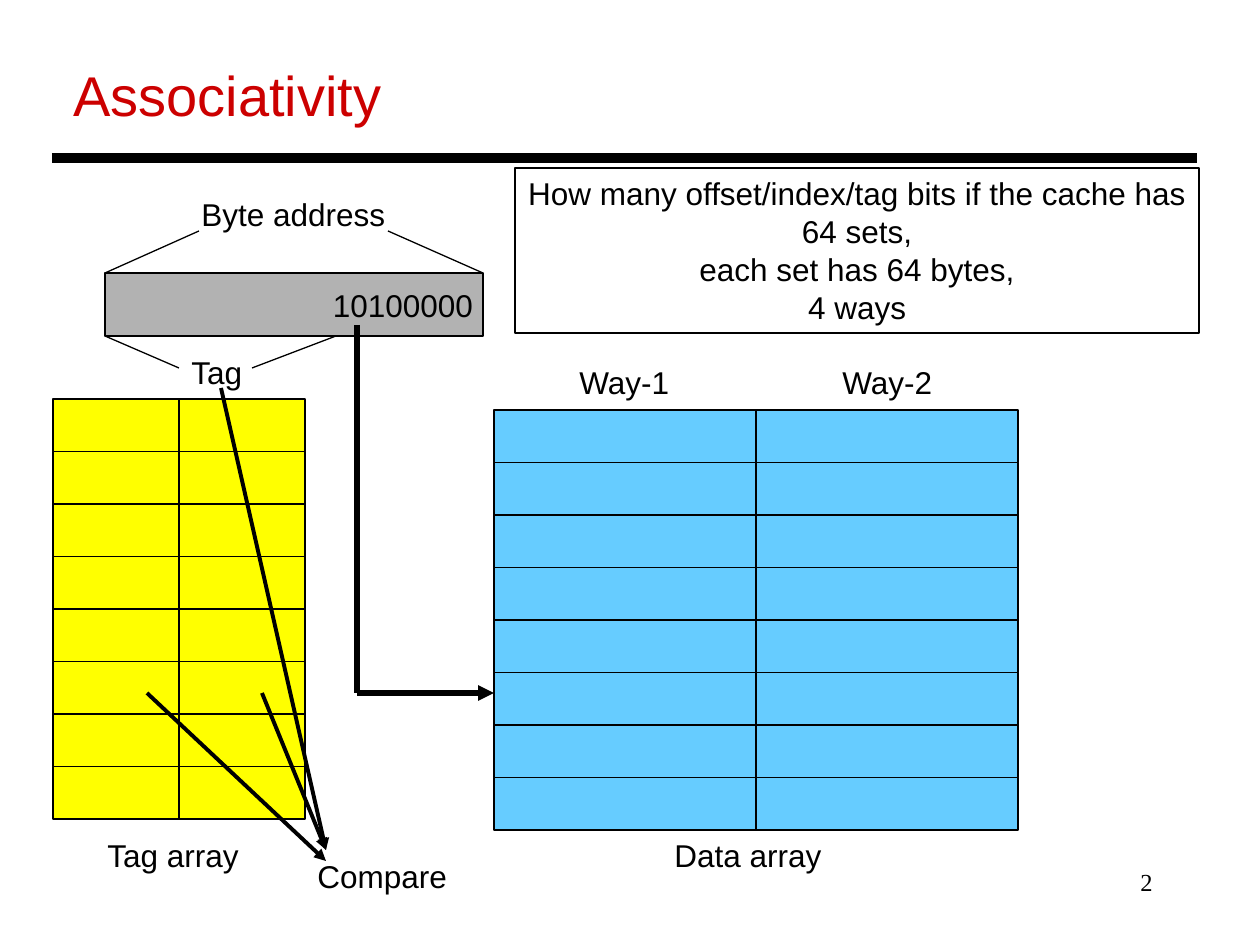
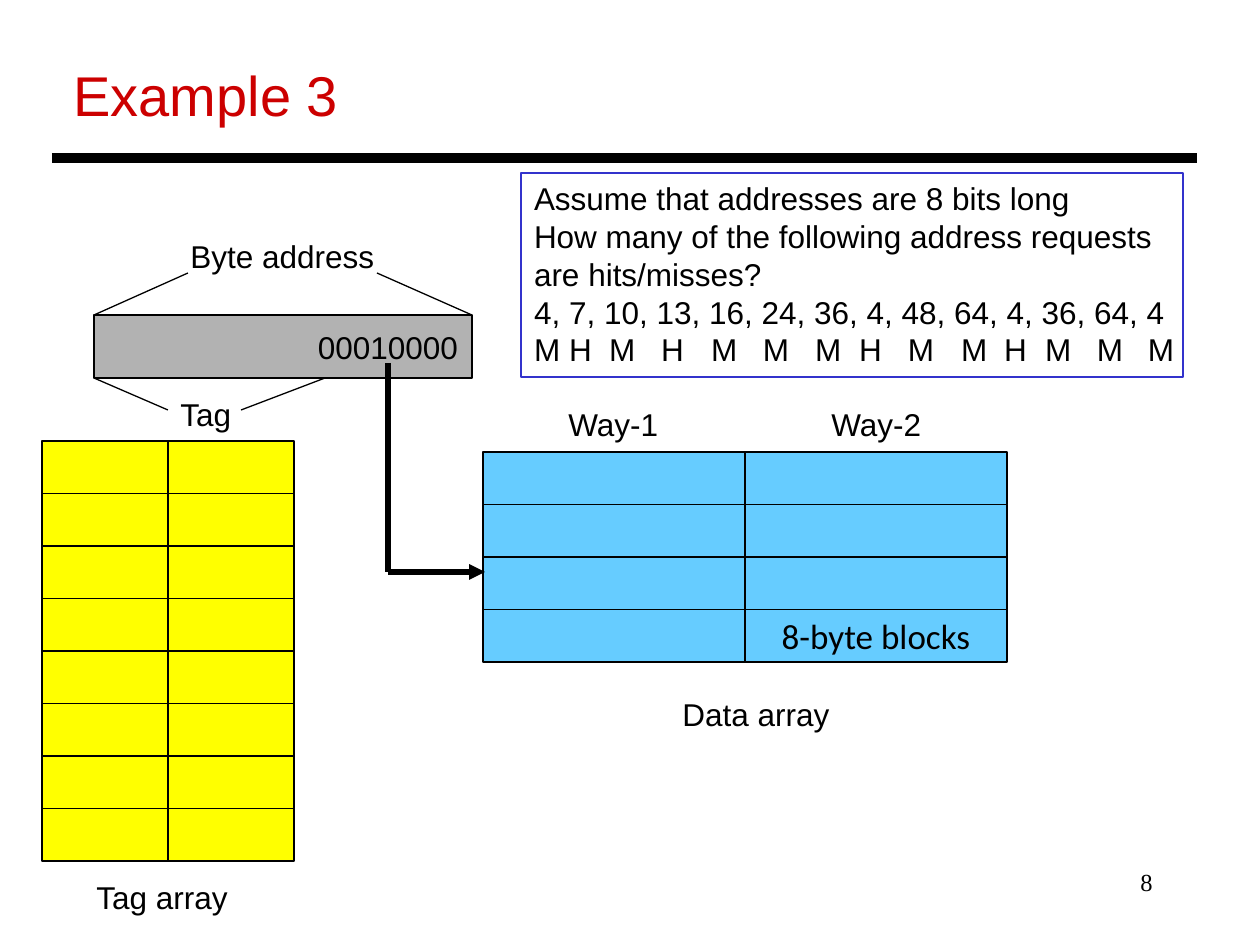
import pptx
import pptx.dml.color
import pptx.enum.shapes
import pptx.enum.text
import pptx.oxml.ns
import pptx.util
from lxml import etree

EMU_PER_PX = 914400 / 126
SLIDE_SIZE = (1260, 945)
COLORS = {
    "title": "CC0000", "ink": "000000", "data": "66CCFF", "tag": "FFFF00",
    "address": "B2B2B2", "note": "3333CC",
}
ALIGN = pptx.enum.text.PP_ALIGN
ANCHOR = pptx.enum.text.MSO_ANCHOR

# Offsets from the top left corner of the address box
ADDRESS_SIZE = (378, 63)
ADDRESS_LINES = [
    ((94, -42), (0, 0)), ((283, -42), (378, 0)),
    ((147, 95), (231, 63)), ((0, 63), (74, 95)),
]
DIAGRAM_LABELS = [
    ("Byte address", (84, -84), 209), ("Tag", (74, 74), 79),
    ("Tag array", (-10, 557), 160),
    ("Way-1", (462, 84), 116), ("Way-2", (725, 84), 116),
]
TAG_OFFSET, DATA_OFFSET = (-52, 126), (389, 137)
TAG_COLUMN, DATA_COLUMN = 126, 262
EIGHT_ROWS = 420

SLIDES = [
    {
        "number": "2", "title": "Associativity", "title_width": 334,
        "origin": (105, 273), "address": "10100000", "address_inset": 10,
        "data_rows": 8, "data_label": (662, 830), "cell_notes": {},
        "index_path": [(357, 325), (357, 693), (494, 693)],
        "question": {
            "box": (515, 168, 684, 165), "border": "ink",
            "align": ALIGN.CENTER, "wrap": False, "tabs": [], "insets": (13, 13),
            "lines": ["How many offset/index/tag bits if the cache has",
                      "64 sets,", "each set has 64 bytes,", "4 ways"],
        },
        "compare_from": [((147, 693), (326, 861)), ((262, 693), (326, 850)),
                         ((221, 388), (326, 850))],
        "compare_label": (305, 851),
    },
    {
        "number": "8", "title": "Example 3", "title_width": 292,
        "origin": (94, 315), "address": "00010000", "address_inset": 14,
        "data_rows": 4, "data_label": (670, 689),
        "cell_notes": {(3, 1): "8-byte blocks"},
        "index_path": [(388, 363), (388, 572), (485, 572)],
        "question": {
            "box": (521, 173, 662, 204), "border": "note",
            "align": ALIGN.LEFT, "wrap": True, "insets": (13, 2),
            "tabs": [35, 75, 127, 177, 229, 281, 325, 374, 427, 470, 511, 563, 614],
            "lines": ["Assume that addresses are 8 bits long",
                      "How many of the following address requests",
                      "are hits/misses?",
                      "4, 7, 10, 13, 16, 24, 36, 4, 48, 64, 4, 36, 64, 4",
                      "\t".join("MHMHMMMHMMHMMM")],
        },
        "compare_from": [], "compare_label": None,
    },
]


def emu(px):
    return round(px * EMU_PER_PX)


def rgb(name):
    return pptx.dml.color.RGBColor.from_string(COLORS[name])


def shifted(origin, offset):
    return origin[0] + offset[0], origin[1] + offset[1]


def write(shape, text, size=18, color="ink", font="Arial", align=ALIGN.LEFT,
          anchor=ANCHOR.TOP, wrap=False):
    frame = shape.text_frame
    frame.text = text
    frame.word_wrap = wrap
    frame.vertical_anchor = anchor
    for paragraph in frame.paragraphs:
        paragraph.alignment = align
        for run in paragraph.runs:
            run.font.size = pptx.util.Pt(size)
            run.font.name = font
            run.font.color.rgb = rgb(color)


def add_label(slide, text, corner, width, height=50, **style):
    box = slide.shapes.add_textbox(*map(emu, (*corner, width, height)))
    write(box, text, **style)


def add_box(slide, left, top, width, height, fill=None, border="ink"):
    box = slide.shapes.add_shape(pptx.enum.shapes.MSO_SHAPE.RECTANGLE,
                                 *map(emu, (left, top, width, height)))
    box.shadow.inherit = False
    if fill:
        box.fill.solid()
        box.fill.fore_color.rgb = rgb(fill)
    else:
        box.fill.background()
    box.line.color.rgb = rgb(border)
    box.line.width = pptx.util.Pt(0.75)
    return box


def add_line(slide, start, end, weight=0.75, arrow=False):
    line = slide.shapes.add_connector(pptx.enum.shapes.MSO_CONNECTOR.STRAIGHT,
                                      *map(emu, (*start, *end)))
    line.line.color.rgb = rgb("ink")
    line.line.width = pptx.util.Pt(weight)
    properties = line._element.spPr
    if arrow:
        etree.SubElement(properties.get_or_add_ln(),
                         pptx.oxml.ns.qn("a:tailEnd"), type="triangle")
    etree.SubElement(properties, pptx.oxml.ns.qn("a:effectLst"))


def add_array(slide, corner, rows, column_width, fill, notes):
    row_height = EIGHT_ROWS / 8
    for column in range(2):
        for row in range(rows):
            cell = add_box(slide, corner[0] + column * column_width,
                           corner[1] + row * row_height,
                           column_width, row_height, fill)
            if (row, column) in notes:
                write(cell, notes[row, column], size=20, font="Calibri",
                      align=ALIGN.CENTER, anchor=ANCHOR.MIDDLE)


def add_frame(slide, content):
    """Add the page number, title and rule that every slide carries."""
    add_label(slide, content["number"], (903, 861), 262, 63, size=14,
              font="Times New Roman", align=ALIGN.RIGHT, wrap=True)
    add_label(slide, content["title"], (61, 54), content["title_width"], 80,
              size=32, color="title")
    add_line(slide, (52, 158), (1197, 158), weight=6)


def add_cache(slide, content):
    origin = content["origin"]
    add_array(slide, shifted(origin, DATA_OFFSET), content["data_rows"],
              DATA_COLUMN, "data", content["cell_notes"])
    add_array(slide, shifted(origin, TAG_OFFSET), 8, TAG_COLUMN, "tag", {})

    address = add_box(slide, *origin, *ADDRESS_SIZE, fill="address")
    write(address, content["address"], align=ALIGN.RIGHT, anchor=ANCHOR.MIDDLE,
          wrap=True)
    address.text_frame.margin_right = emu(content["address_inset"])
    for start, end in ADDRESS_LINES:
        add_line(slide, shifted(origin, start), shifted(origin, end))

    for text, offset, width in DIAGRAM_LABELS:
        add_label(slide, text, shifted(origin, offset), width)
    add_label(slide, "Data array", content["data_label"], 173)

    bit, corner, row = content["index_path"]
    add_line(slide, bit, corner, weight=3)
    add_line(slide, corner, row, weight=3, arrow=True)


def add_question(slide, question):
    box = add_box(slide, *question["box"], border=question["border"])
    write(box, "\n".join(question["lines"]), align=question["align"],
          wrap=question["wrap"])
    frame = box.text_frame
    frame.margin_left, frame.margin_right = map(emu, question["insets"])
    if question["tabs"]:
        properties = frame.paragraphs[-1]._p.get_or_add_pPr()
        stops = etree.SubElement(properties, pptx.oxml.ns.qn("a:tabLst"))
        for position in question["tabs"]:
            etree.SubElement(stops, pptx.oxml.ns.qn("a:tab"),
                             pos=str(emu(position)), algn="l")


def add_comparison(slide, content):
    for start, end in content["compare_from"]:
        add_line(slide, start, end, weight=2.25, arrow=True)
    if content["compare_label"]:
        add_label(slide, "Compare", content["compare_label"], 155)


def main():
    deck = pptx.Presentation()
    deck.slide_width, deck.slide_height = map(emu, SLIDE_SIZE)
    for content in SLIDES:
        slide = deck.slides.add_slide(deck.slide_layouts[6])
        add_frame(slide, content)
        add_cache(slide, content)
        add_question(slide, content["question"])
        add_comparison(slide, content)
    deck.save("out.pptx")


if __name__ == "__main__":
    main()
